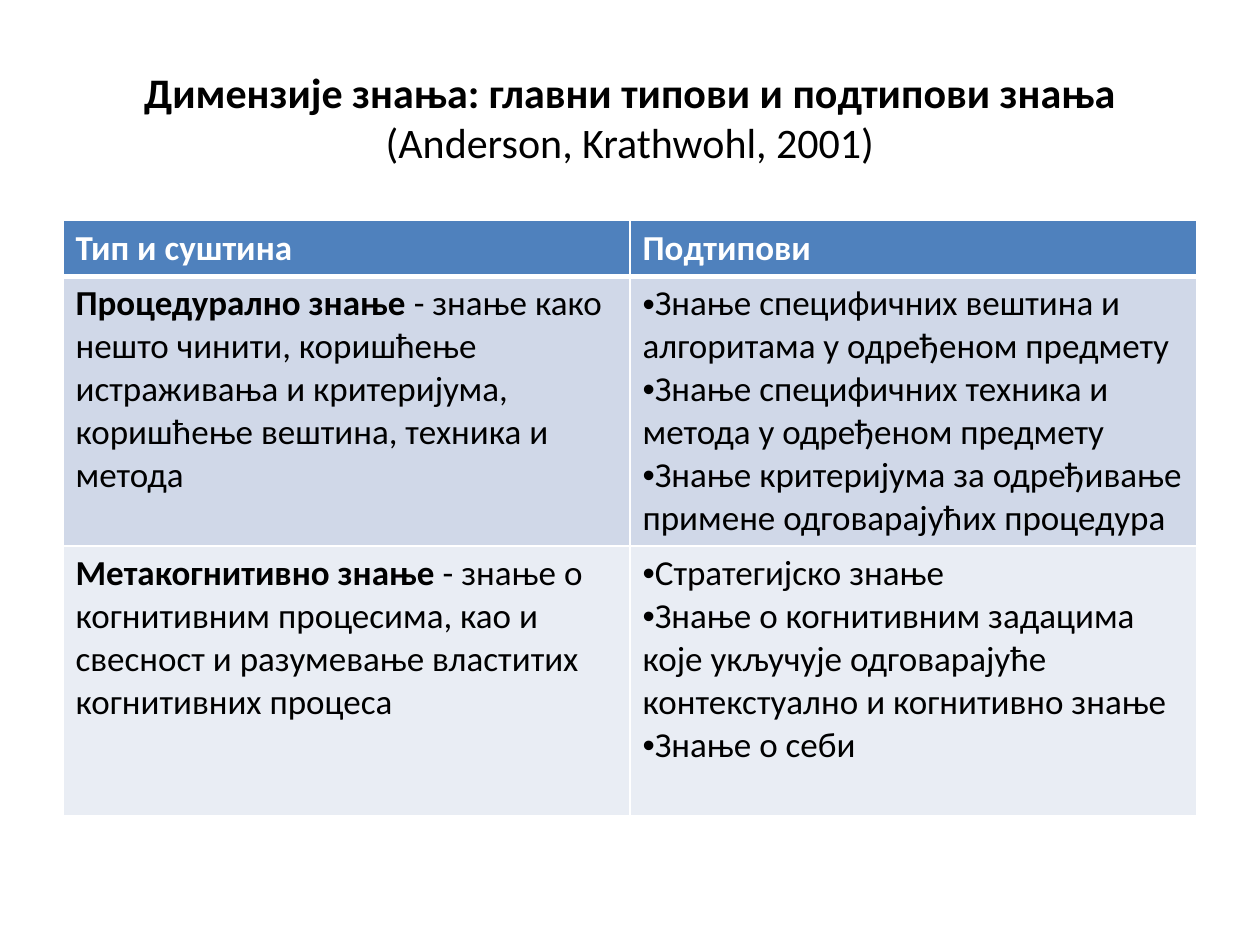
from lxml import etree
from pptx import Presentation
from pptx import util as u
from pptx.dml import color
from pptx.enum import text
from pptx.oxml import ns

COLORS = {
    "text": "000000",
    "header_text": "FFFFFF",
    "border": "FFFFFF",
    "header": "4F81BD",
    "odd_row": "D0D8E8",
    "even_row": "E9EDF4",
}
LEFT, WIDTH = u.Cm(1.27), u.Cm(22.86)
ROW_HEIGHTS = [u.Cm(1.1), u.Cm(5.44), u.Cm(5.43)]
BORDER_WIDTHS = {"lnL": 1, "lnR": 1, "lnT": 1, "lnB": 1}
HEADER_WIDTHS = {**BORDER_WIDTHS, "lnB": 3}
UNDER_HEADER_WIDTHS = {**BORDER_WIDTHS, "lnT": 3}

TITLE = [
    ("Димензије знања: главни типови и подтипови знања ", True),
    ("(Anderson, Krathwohl, 2001)", False),
]
HEADERS = ["Тип и суштина", "Подтипови"]
KNOWLEDGE_TYPES = [
    (
        "Процедурално знање ",
        "- знање како нешто чинити, коришћење истраживања и критеријума, "
        "коришћење вештина, техника и метода",
        [
            "Знање специфичних вештина и алгоритама у одређеном предмету",
            "Знање специфичних техника и метода у одређеном предмету",
            "Знање критеријума за одређивање примене одговарајућих процедура",
        ],
    ),
    (
        "Метакогнитивно знање ",
        "- знање о когнитивним процесима, као и свесност и разумевање "
        "властитих когнитивних процеса",
        [
            "Стратегијско знање",
            "Знање о когнитивним задацима које укључује одговарајуће "
            "контекстуално и когнитивно знање",
            "Знање о себи",
        ],
    ),
]


def rgb(name):
    return color.RGBColor.from_string(COLORS[name])


def add_runs(paragraph, runs, size, color_name="text"):
    """Add (wording, bold) pairs to the paragraph."""
    for wording, bold in runs:
        run = paragraph.add_run()
        run.text = wording
        font_format = {"name": "Calibri", "size": u.Pt(size), "bold": bold}
        for attribute, value in font_format.items():
            setattr(run.font, attribute, value)
        run.font.color.rgb = rgb(color_name)


def add_bullet(paragraph):
    properties = paragraph._p.get_or_add_pPr()
    properties.set("marL", "0")
    properties.set("indent", "0")
    etree.SubElement(properties, ns.qn("a:buFont"), typeface="Arial")
    etree.SubElement(properties, ns.qn("a:buChar"), char="•")


def set_borders(cell, widths):
    properties = cell._tc.get_or_add_tcPr()
    for side, points in widths.items():
        line = etree.SubElement(properties, ns.qn(f"a:{side}"), w=str(u.Pt(points)))
        fill = etree.SubElement(line, ns.qn("a:solidFill"))
        etree.SubElement(fill, ns.qn("a:srgbClr"), val=COLORS["border"])


def fill_cell(cell, paragraphs, fill, widths, color_name="text", bulleted=False):
    """Write one list of runs per paragraph, then border and fill the cell."""
    frame = cell.text_frame
    for index, runs in enumerate(paragraphs):
        paragraph = frame.add_paragraph() if index else frame.paragraphs[0]
        if bulleted:
            add_bullet(paragraph)
        add_runs(paragraph, runs, 20, color_name)
    set_borders(cell, widths)
    cell.fill.solid()
    cell.fill.fore_color.rgb = rgb(fill)


def format_title(title):
    place = {"left": LEFT, "top": u.Cm(0.76), "width": WIDTH, "height": u.Cm(3.18)}
    for attribute, value in place.items():
        setattr(title, attribute, value)
    title.text_frame.vertical_anchor = text.MSO_ANCHOR.MIDDLE
    paragraph = title.text_frame.paragraphs[0]
    paragraph.alignment = text.PP_ALIGN.CENTER
    add_runs(paragraph, TITLE, 24)


def add_knowledge_table(slide):
    table = slide.shapes.add_table(
        len(ROW_HEIGHTS), len(HEADERS), LEFT, u.Cm(4.45), WIDTH, sum(ROW_HEIGHTS)
    ).table
    for row, height in zip(table.rows, ROW_HEIGHTS):
        row.height = height
    for column, header in enumerate(HEADERS):
        fill_cell(table.cell(0, column), [[(header, True)]], "header",
                  HEADER_WIDTHS, "header_text")
    row_formats = [("odd_row", UNDER_HEADER_WIDTHS), ("even_row", BORDER_WIDTHS)]
    for row, (knowledge, row_format) in enumerate(zip(KNOWLEDGE_TYPES, row_formats), 1):
        name, essence, subtypes = knowledge
        fill_cell(table.cell(row, 0), [[(name, True), (essence, False)]], *row_format)
        fill_cell(table.cell(row, 1), [[(subtype, False)] for subtype in subtypes],
                  *row_format, bulleted=True)


def main():
    presentation = Presentation()
    presentation.slide_width, presentation.slide_height = u.Cm(25.4), u.Cm(19.05)
    slide = presentation.slides.add_slide(presentation.slide_layouts[5])
    format_title(slide.shapes.title)
    add_knowledge_table(slide)
    presentation.save("out.pptx")


if __name__ == "__main__":
    main()
